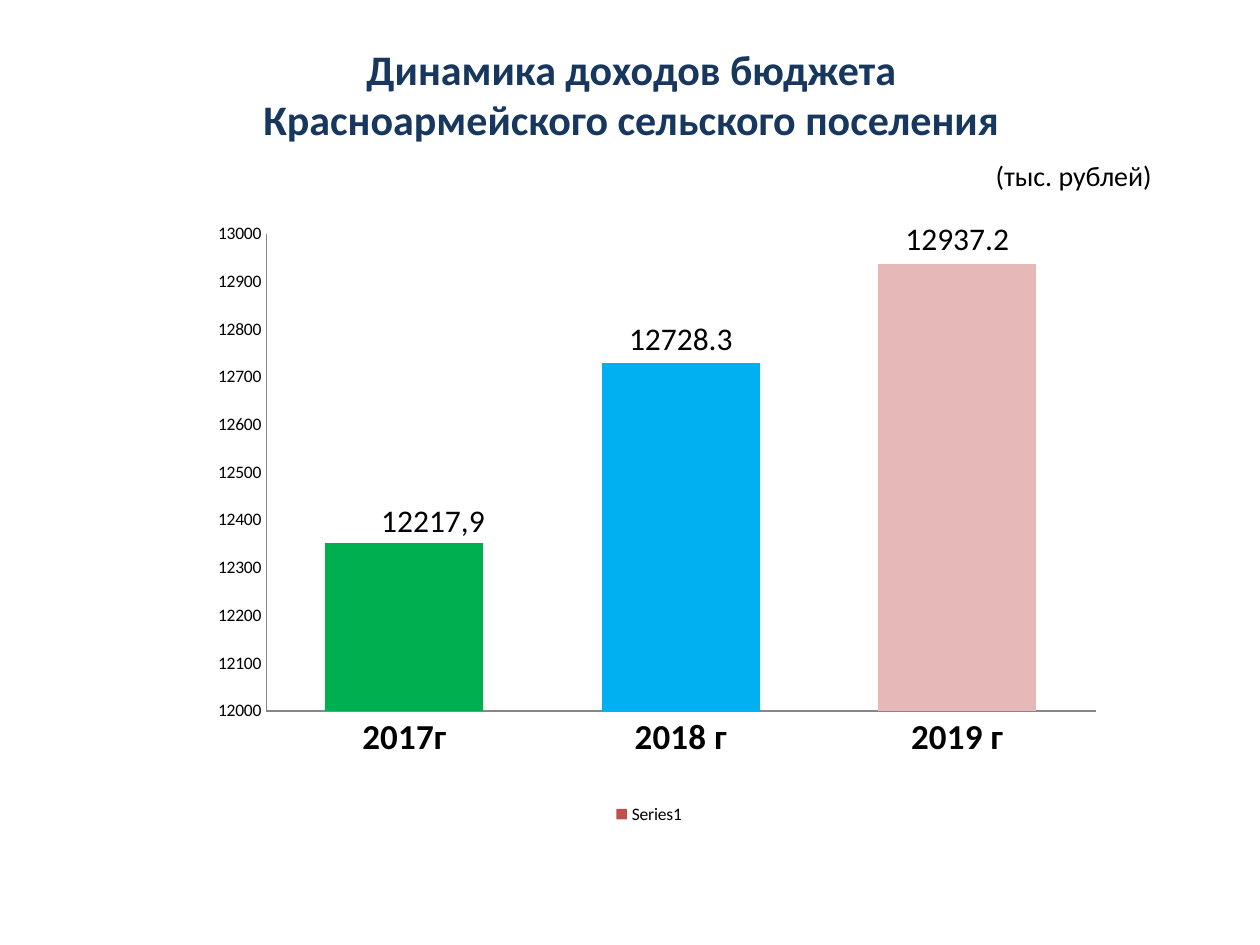
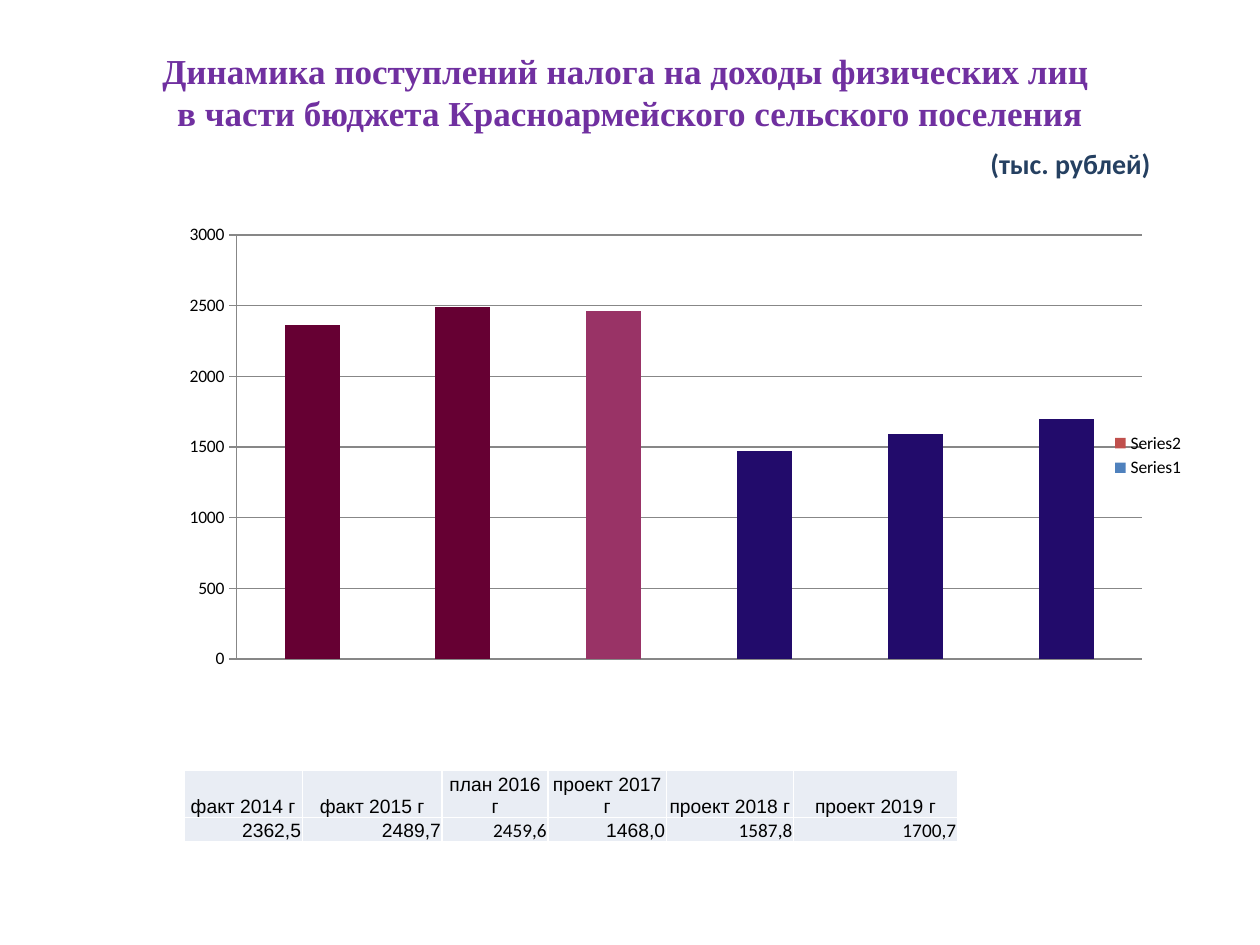
"""Build two slides on the revenue of a rural settlement budget."""
import lxml.etree as etree
import pptx
import pptx.chart.data
import pptx.dml.color
import pptx.enum.chart
import pptx.enum.text
import pptx.oxml.ns
import pptx.util

Inches, Pt = pptx.util.Inches, pptx.util.Pt
RGB = pptx.dml.color.RGBColor
Kind = pptx.enum.chart.XL_CHART_TYPE
Side = pptx.enum.chart.XL_LEGEND_POSITION
Tick = pptx.enum.chart.XL_TICK_MARK
Place = pptx.enum.chart.XL_LABEL_POSITION
Align = pptx.enum.text.PP_ALIGN
Anchor = pptx.enum.text.MSO_ANCHOR
qn = pptx.oxml.ns.qn

BLACK = RGB(0x00, 0x00, 0x00)
WHITE = RGB(0xFF, 0xFF, 0xFF)
NAVY = RGB(0x17, 0x37, 0x5E)
STEEL = RGB(0x25, 0x40, 0x61)
PURPLE = RGB(0x70, 0x30, 0xA0)
GREEN = RGB(0x00, 0xB0, 0x50)
SKY = RGB(0x00, 0xB0, 0xF0)
ROSE = RGB(0xE6, 0xB9, 0xB8)
WINE = RGB(0x66, 0x00, 0x33)
PLUM = RGB(0x99, 0x33, 0x66)
INDIGO = RGB(0x22, 0x0B, 0x6B)
BLUE = RGB(0x4F, 0x81, 0xBD)
RED = RGB(0xC0, 0x50, 0x4D)
GREY = RGB(0x87, 0x87, 0x87)
PALE = RGB(0xE9, 0xED, 0xF4)

UNIT = "(тыс. рублей)"
INCOME = [("2017г", 12352.4, GREEN), ("2018 г", 12728.3, SKY), ("2019 г", 12937.2, ROSE)]
TAX = [
    ("факт 2014 г", 2362.5, WINE, 0.94, "Arial"),
    ("факт 2015 г", 2489.7, WINE, 1.11, "Arial"),
    ("план 2016 г", 2459.6, PLUM, 0.84, "Calibri"),
    ("проект 2017 г", 1468.0, INDIGO, 0.94, "Arial"),
    ("проект 2018 г", 1587.8, INDIGO, 1.01, "Calibri"),
    ("проект 2019 г", 1700.7, INDIGO, 1.3, "Calibri"),
]


def style(font, size, color=BLACK, name="Calibri", bold=False):
    """Set the look of a font."""
    font.size, font.name, font.bold = Pt(size), name, bold
    font.color.rgb = color


def label(slide, box, text, align, *look):
    """Add one text box centred vertically in its box."""
    frame = slide.shapes.add_textbox(*map(Inches, box)).text_frame
    frame.word_wrap = True
    frame.vertical_anchor = Anchor.MIDDLE
    para = frame.paragraphs[0]
    para.text, para.alignment = text, align
    style(para.font, *look)


def header(slide, box, lines, look, tone, bold, drop):
    """Add a title and, beneath it, the unit of measure."""
    left, top, width, height = box
    label(slide, box, "\v".join(lines), Align.CENTER, *look)
    unit = left + width - 2.77, top + drop, 2.5, 0.4
    label(slide, unit, UNIT, Align.RIGHT, 16, tone, "Calibri", bold)


def layout(node, index, **parts):
    """Insert a manual layout into a chart node."""
    for old in node.findall(qn("c:layout")):
        node.remove(old)
    outer = etree.Element(qn("c:layout"))
    manual = etree.SubElement(outer, qn("c:manualLayout"))
    for tag, value in parts.items():
        etree.SubElement(manual, qn(f"c:{tag}")).set("val", str(value))
    node.insert(index, outer)


def columns(slide, box, kind, names, rows, tints, gap, area, side):
    """Add a column chart whose last series has a colour per point."""
    data = pptx.chart.data.CategoryChartData()
    data.categories = names
    for num, row in enumerate(rows, 1):
        data.add_series(f"Series{num}", row)
    chart = slide.shapes.add_chart(kind, *map(Inches, box), data).chart
    chart.has_title = False
    style(chart.font, 10)
    chart.has_legend = True
    chart.legend.position = side
    chart.legend.include_in_layout = False
    plot = chart.plots[0]
    plot.gap_width, plot.vary_by_categories = gap, False
    for series, tone in zip(reversed(plot.series), (RED, BLUE)):
        series.format.fill.solid()
        series.format.fill.fore_color.rgb = tone
    for num, tint in enumerate(tints):
        fill = plot.series[-1].points[num].format.fill
        fill.solid()
        fill.fore_color.rgb = tint
    for axis in (chart.category_axis, chart.value_axis):
        axis.format.line.color.rgb = GREY
        axis.major_tick_mark = axis.minor_tick_mark = Tick.NONE
    left, top, width, height = area
    layout(chart._chartSpace.find(".//" + qn("c:plotArea")), 0,
           layoutTarget="inner", xMode="edge", yMode="edge",
           x=left, y=top, w=width, h=height)
    return chart


def income(slide, box):
    """Add the chart of total income."""
    names, values, tints = zip(*INCOME)
    chart = columns(slide, box, Kind.COLUMN_CLUSTERED, names, [values], tints, 75,
                    (0.071, 0.032, 0.929, 0.776), Side.BOTTOM)
    style(chart.category_axis.tick_labels.font, 20, bold=True)
    axis = chart.value_axis
    axis.has_major_gridlines = False
    axis.minimum_scale, axis.maximum_scale, axis.major_unit = 12000, 13000, 100
    series = chart.plots[0].series[0]
    labels = series.data_labels
    labels.show_value, labels.position = True, Place.OUTSIDE_END
    style(labels.font, 18)
    first = series.points[0].data_label
    first.text_frame.text = "12217,9"
    style(first.text_frame.paragraphs[0].runs[0].font, 18)
    first.position = Place.OUTSIDE_END
    layout(series._element.find(".//" + qn("c:dLbl")), 1, x=0.032, y=0.005)


def tax(slide, box):
    """Add the chart of income tax receipts, rounded to tens."""
    values, tints = [round(row[1] / 10) * 10 for row in TAX], [row[2] for row in TAX]
    names = [str(num) for num in range(1, len(TAX) + 1)]
    chart = columns(slide, box, Kind.COLUMN_STACKED, names, [[None] * len(TAX), values],
                    tints, 174, (0.097, 0.031, 0.851, 0.902), Side.RIGHT)
    chart.plots[0].overlap = 100
    chart.category_axis.visible = False
    axis = chart.value_axis
    axis.major_tick_mark = Tick.OUTSIDE
    axis.minimum_scale, axis.maximum_scale, axis.major_unit = 0, 3000, 500
    axis.has_major_gridlines = True
    axis.major_gridlines.format.line.color.rgb = GREY


def fill(cell, text, align, face):
    """Write one table cell with white borders."""
    cell.margin_left = cell.margin_right = cell.margin_top = Inches(0.01)
    cell.margin_bottom = 0
    cell.vertical_anchor = Anchor.BOTTOM
    para = cell.text_frame.paragraphs[0]
    para.text, para.alignment = text, align
    style(para.font, 11, BLACK, face)
    props = cell._tc.get_or_add_tcPr()
    for edge in "LRTB":
        line = etree.SubElement(props, qn(f"a:ln{edge}"), w=str(Pt(1)))
        solid = etree.SubElement(line, qn("a:solidFill"))
        etree.SubElement(solid, qn("a:srgbClr"), val=str(WHITE))
    cell.fill.solid()
    cell.fill.fore_color.rgb = PALE


def table(slide, box):
    """Add the table of tax receipts by year."""
    grid = slide.shapes.add_table(2, len(TAX), *map(Inches, box)).table
    grid.first_row = grid.horz_banding = False
    for row, height in zip(grid.rows, (0.3, 0.17)):
        row.height = Inches(height)
    for col, (name, value, _, width, face) in enumerate(TAX):
        grid.columns[col].width = Inches(width)
        fill(grid.cell(0, col), name, Align.CENTER, "Arial")
        fill(grid.cell(1, col), f"{value:.1f}".replace(".", ","), Align.RIGHT, face)


def main():
    """Build and save both slides."""
    deck = pptx.Presentation()
    deck.slide_width, deck.slide_height = Inches(10), Inches(7.5)
    blank = deck.slide_layouts[6]

    slide = deck.slides.add_slide(blank)
    header(slide, (0.51, 0.27, 9, 0.95),
           ("Динамика доходов бюджета", "Красноармейского сельского поселения"),
           (24, NAVY, "Calibri", True), BLACK, False, 0.92)
    income(slide, (1.61, 1.7, 7.09, 4.88))

    slide = deck.slides.add_slide(blank)
    header(slide, (0.5, 0.28, 9, 0.9),
           ("Динамика поступлений налога на доходы физических лиц ",
            "в части бюджета Красноармейского сельского поселения"),
           (20, PURPLE, "Times New Roman", True), STEEL, True, 0.82)
    table(slide, (1.46, 6.11, 6.14, 0.47))
    tax(slide, (1.06, 1.75, 8.44, 3.73))

    deck.save("out.pptx")


if __name__ == "__main__":
    main()
